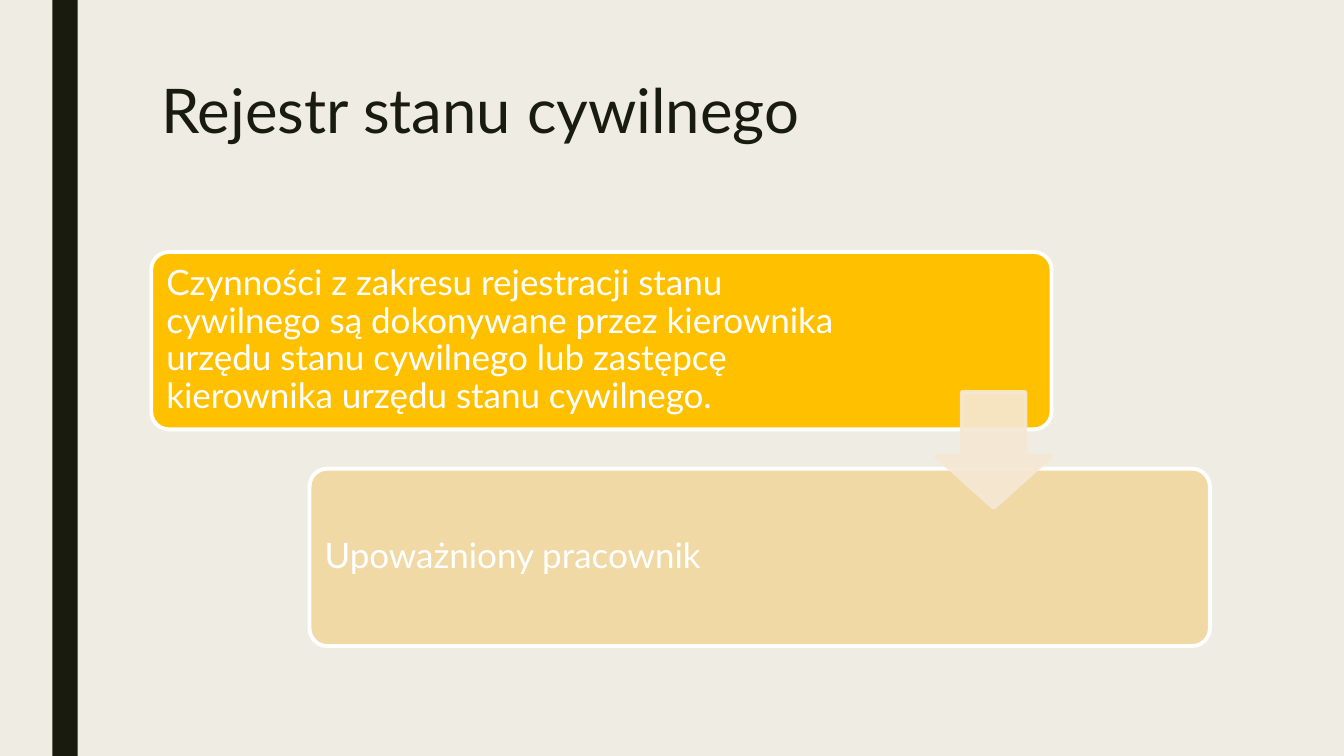
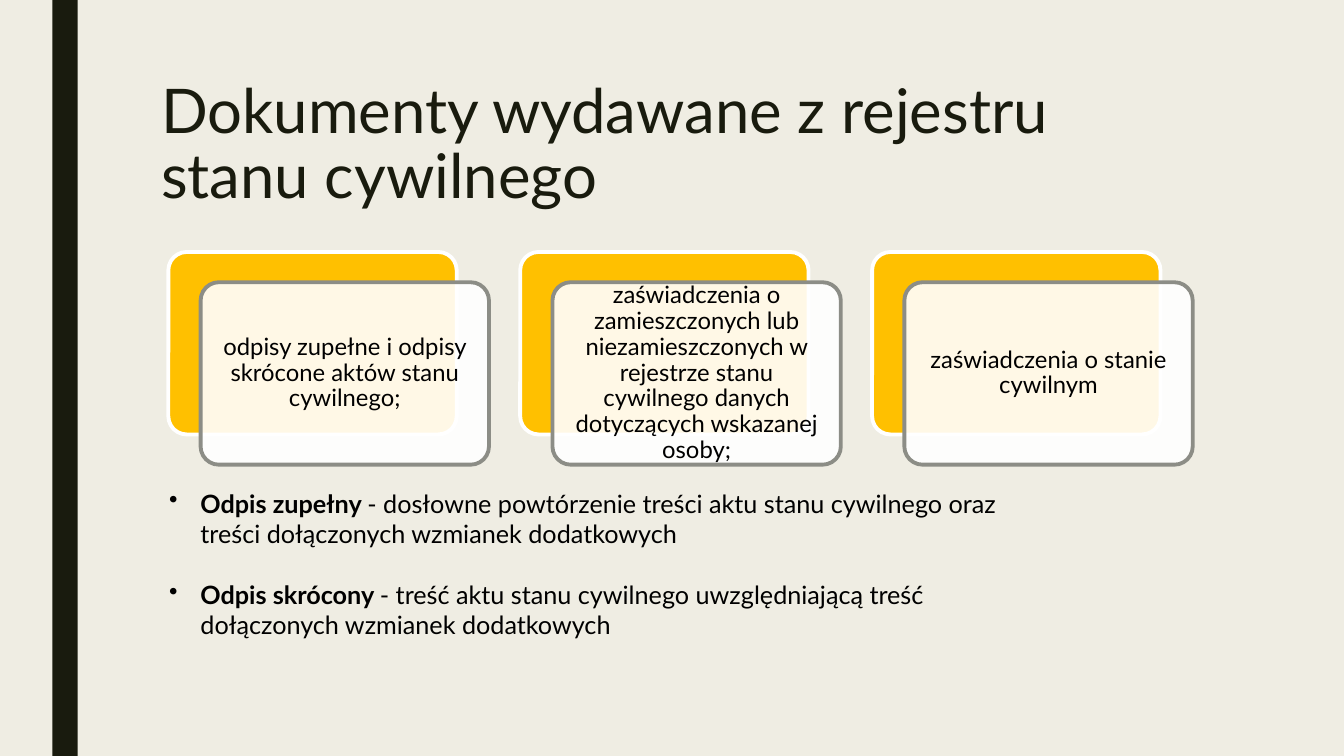
from pptx import Presentation
from pptx.dml.color import RGBColor
from pptx.enum.shapes import MSO_SHAPE
from pptx.enum.text import MSO_ANCHOR, PP_ALIGN
from pptx.oxml.ns import qn
from pptx.util import Inches, Pt

FONT = "Lato"
BACKGROUND = "EFEDE3"
DARK = "191B0E"
GOLD = "FFC000"
SAND = "F0D9A5"
CREAM = "F5E8D4"
GREY = "8C8D86"
WHITE = "FFFFFF"
BLACK = "000000"


def color(hex_string):
    return RGBColor.from_string(hex_string)


def style_paragraph(paragraph, size, font_color, line_spacing=None):
    paragraph.font.name = FONT
    paragraph.font.size = Pt(size)
    paragraph.font.color.rgb = color(font_color)
    if line_spacing:
        paragraph.line_spacing = line_spacing


def add_text_frame(slide, left, top, width, height):
    box = slide.shapes.add_textbox(
        Inches(left), Inches(top), Inches(width), Inches(height))
    box.text_frame.word_wrap = True
    return box.text_frame


def add_block(slide, preset, left, top, width, height, fill, line=None,
              adjustments=()):
    shape = slide.shapes.add_shape(
        preset, Inches(left), Inches(top), Inches(width), Inches(height))
    shape.shadow.inherit = False
    shape.fill.solid()
    shape.fill.fore_color.rgb = color(fill)
    if line:
        shape.line.color.rgb = color(line)
        shape.line.width = Pt(2.75)
    else:
        shape.line.fill.background()
    for index, value in enumerate(adjustments):
        shape.adjustments[index] = value
    return shape


def add_rounded_block(slide, left, top, width, height, fill, line):
    return add_block(slide, MSO_SHAPE.ROUNDED_RECTANGLE, left, top, width,
                     height, fill, line, [0.1])


def set_opacity(element, percent):
    """Apply the opacity to every colour found inside the XML element."""
    for color_element in element.iter(qn("a:srgbClr")):
        alpha = color_element.makeelement(
            qn("a:alpha"), {"val": str(percent * 1000)})
        color_element.append(alpha)


def write_in_shape(shape, text, size, font_color, alignment, inset,
                   right_inset=None):
    frame = shape.text_frame
    frame.word_wrap = True
    frame.vertical_anchor = MSO_ANCHOR.MIDDLE
    frame.margin_left = frame.margin_top = frame.margin_bottom = Inches(inset)
    frame.margin_right = Inches(right_inset or inset)
    paragraph = frame.paragraphs[0]
    paragraph.text = text
    paragraph.alignment = alignment
    style_paragraph(paragraph, size, font_color, 0.9)


def add_base_slide(presentation, title):
    """Add a slide with the shared background, side band and title."""
    slide = presentation.slides.add_slide(presentation.slide_layouts[6])
    slide.background.fill.solid()
    slide.background.fill.fore_color.rgb = color(BACKGROUND)
    add_block(slide, MSO_SHAPE.RECTANGLE, 0.52, 0, 0.25, 7.5, DARK)
    paragraph = add_text_frame(slide, 1.5, 0.75, 10.5, 1.62).paragraphs[0]
    paragraph.text = title
    style_paragraph(paragraph, 44, DARK, 0.89)
    return slide


def add_steps(slide, steps):
    """Add blocks that descend to the right."""
    for index, (text, fill) in enumerate(steps):
        block = add_rounded_block(slide, 1.5 + 1.57 * index,
                                  2.5 + 2.15 * index, 8.93, 1.76, fill, WHITE)
        write_in_shape(block, text, 25, WHITE, PP_ALIGN.LEFT, 0.1, 1.83)


def add_down_arrow(slide):
    arrow = add_block(slide, MSO_SHAPE.DOWN_ARROW, 9.28, 3.89, 1.15, 1.15,
                      CREAM, CREAM, [0.55, 0.45])
    set_opacity(arrow.element.spPr, 90)


def add_cards(slide, texts):
    """Add a row of translucent cards, each over a gold block."""
    width, height = 2.86, 1.81
    for index, text in enumerate(texts):
        left, top = 1.67 + 3.49 * index, 2.5
        add_rounded_block(slide, left, top, width, height, GOLD, WHITE)
        card = add_rounded_block(slide, left + 0.32, top + 0.3, width, height,
                                 WHITE, GREY)
        set_opacity(card.element.spPr.find(qn("a:solidFill")), 90)
        write_in_shape(card, text, 17, BLACK, PP_ALIGN.CENTER, 0.07)


def add_definitions(slide, definitions):
    """Add a bulleted list of bold terms with their meanings."""
    frame = add_text_frame(slide, 1.58, 4.79, 8.93, 1.92)
    for index, (term, meaning) in enumerate(definitions):
        paragraph = frame.add_paragraph() if index else frame.paragraphs[0]
        style_paragraph(paragraph, 18, BLACK)
        paragraph.space_before = Pt(22 if index else 0)
        properties = paragraph._p.get_or_add_pPr()
        indent = Inches(0.31)
        properties.set("marL", str(indent))
        properties.set("indent", str(-indent))
        bullet = properties.makeelement(qn("a:buChar"), {"char": "•"})
        properties.find(qn("a:defRPr")).addprevious(bullet)
        term_run = paragraph.add_run()
        term_run.text = term + " "
        term_run.font.bold = True
        paragraph.add_run().text = "- " + meaning


def main():
    presentation = Presentation()
    presentation.slide_width = Inches(13.33)
    presentation.slide_height = Inches(7.5)

    register = add_base_slide(presentation, "Rejestr stanu cywilnego")
    add_steps(register, [
        ("Czynności z zakresu rejestracji stanu cywilnego są dokonywane przez "
         "kierownika urzędu stanu cywilnego lub zastępcę kierownika urzędu "
         "stanu cywilnego.", GOLD),
        ("Upoważniony pracownik", SAND),
    ])
    add_down_arrow(register)

    documents = add_base_slide(
        presentation, "Dokumenty wydawane z rejestru stanu cywilnego")
    add_cards(documents, [
        "odpisy zupełne i odpisy skrócone aktów stanu cywilnego;",
        "zaświadczenia o zamieszczonych lub niezamieszczonych w rejestrze "
        "stanu cywilnego danych dotyczących wskazanej osoby;",
        "zaświadczenia o stanie cywilnym",
    ])
    add_definitions(documents, [
        ("Odpis zupełny", "dosłowne powtórzenie treści aktu stanu cywilnego "
         "oraz treści dołączonych wzmianek dodatkowych"),
        ("Odpis skrócony", "treść aktu stanu cywilnego uwzględniającą treść "
         "dołączonych wzmianek dodatkowych"),
    ])

    presentation.save("out.pptx")


if __name__ == "__main__":
    main()
